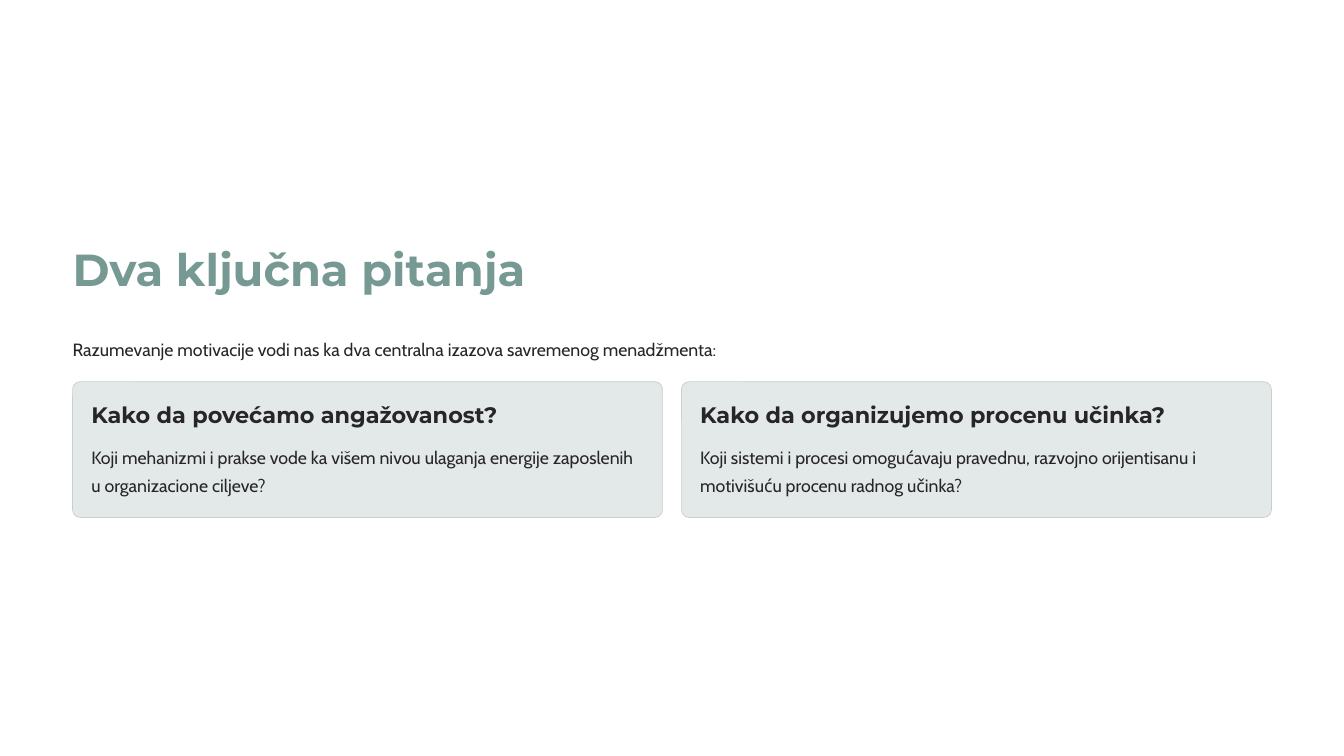
import pptx
import pptx.dml.color
import pptx.enum.shapes
import pptx.util

TITLE = "Dva ključna pitanja"
INTRO = "Razumevanje motivacije vodi nas ka dva centralna izazova savremenog menadžmenta:"
QUESTIONS = [
    ("Kako da povećamo angažovanost?", 3.07,
     "Koji mehanizmi i prakse vode ka višem nivou ulaganja energije zaposlenih u organizacione ciljeve?"),
    ("Kako da organizujemo procenu učinka?", 3.52,
     "Koji sistemi i procesi omogućavaju pravednu, razvojno orijentisanu i motivišuću procenu radnog učinka?"),
]
COLORS = {"page": "FFFFFF", "title": "769993", "text": "272525",
          "card": "E2E9E8", "border": "C8CFCE"}
STYLES = {
    "title": {"font": "Montserrat", "size": 24, "bold": True, "color": "title", "spacing": 1.04},
    "heading": {"font": "Montserrat", "size": 12, "bold": True, "color": "text", "spacing": 1.04},
    "body": {"font": "Cabin", "size": 9.5, "bold": False, "color": "text", "spacing": 1.33},
}
PAGE_WIDTH = 10
PAGE_HEIGHT = PAGE_WIDTH * 9 / 16
MARGIN = 0.54
CARD_TOP, CARD_WIDTH, CARD_HEIGHT = 2.84, 4.39, 1.01
GAP = 0.14
PADDING = 0.14
CORNER = 0.056


def color(name):
    return pptx.dml.color.RGBColor.from_string(COLORS[name])


def inches(*lengths):
    return [pptx.util.Inches(length) for length in lengths]


def add_text(page, text, style_name, left, top, width, height, wrap=False):
    style = STYLES[style_name]
    box = page.shapes.add_textbox(*inches(left, top, width, height))
    frame = box.text_frame
    frame.margin_left = frame.margin_top = frame.margin_right = frame.margin_bottom = 0
    frame.word_wrap = wrap
    para = frame.paragraphs[0]
    para.line_spacing = style["spacing"]
    span = para.add_run()
    span.text = text
    span.font.name = style["font"]
    span.font.size = pptx.util.Pt(style["size"])
    span.font.bold = style["bold"]
    span.font.color.rgb = color(style["color"])


def add_card(page, left, heading, heading_width, body):
    card = page.shapes.add_shape(
        pptx.enum.shapes.MSO_SHAPE.ROUNDED_RECTANGLE,
        *inches(left, CARD_TOP, CARD_WIDTH, CARD_HEIGHT))
    card.adjustments[0] = CORNER
    card.shadow.inherit = False
    card.fill.solid()
    card.fill.fore_color.rgb = color("card")
    card.line.color.rgb = color("border")
    card.line.width = pptx.util.Pt(0.38)
    text_left = left + PADDING
    add_text(page, heading, "heading", text_left, CARD_TOP + PADDING, heading_width, 0.21)
    add_text(page, body, "body", text_left, CARD_TOP + 0.43,
             CARD_WIDTH - 2 * PADDING, 0.43, wrap=True)


def main():
    deck = pptx.Presentation()
    deck.slide_width, deck.slide_height = inches(PAGE_WIDTH, PAGE_HEIGHT)
    page = deck.slides.add_slide(deck.slide_layouts[6])
    page.background.fill.solid()
    page.background.fill.fore_color.rgb = color("page")
    add_text(page, TITLE, "title", MARGIN, 1.78, 3.92, 0.42)
    add_text(page, INTRO, "body", MARGIN, 2.47, 9.41, 0.22)
    for index, question in enumerate(QUESTIONS):
        add_card(page, MARGIN + index * (CARD_WIDTH + GAP), *question)
    deck.save("out.pptx")


if __name__ == "__main__":
    main()
